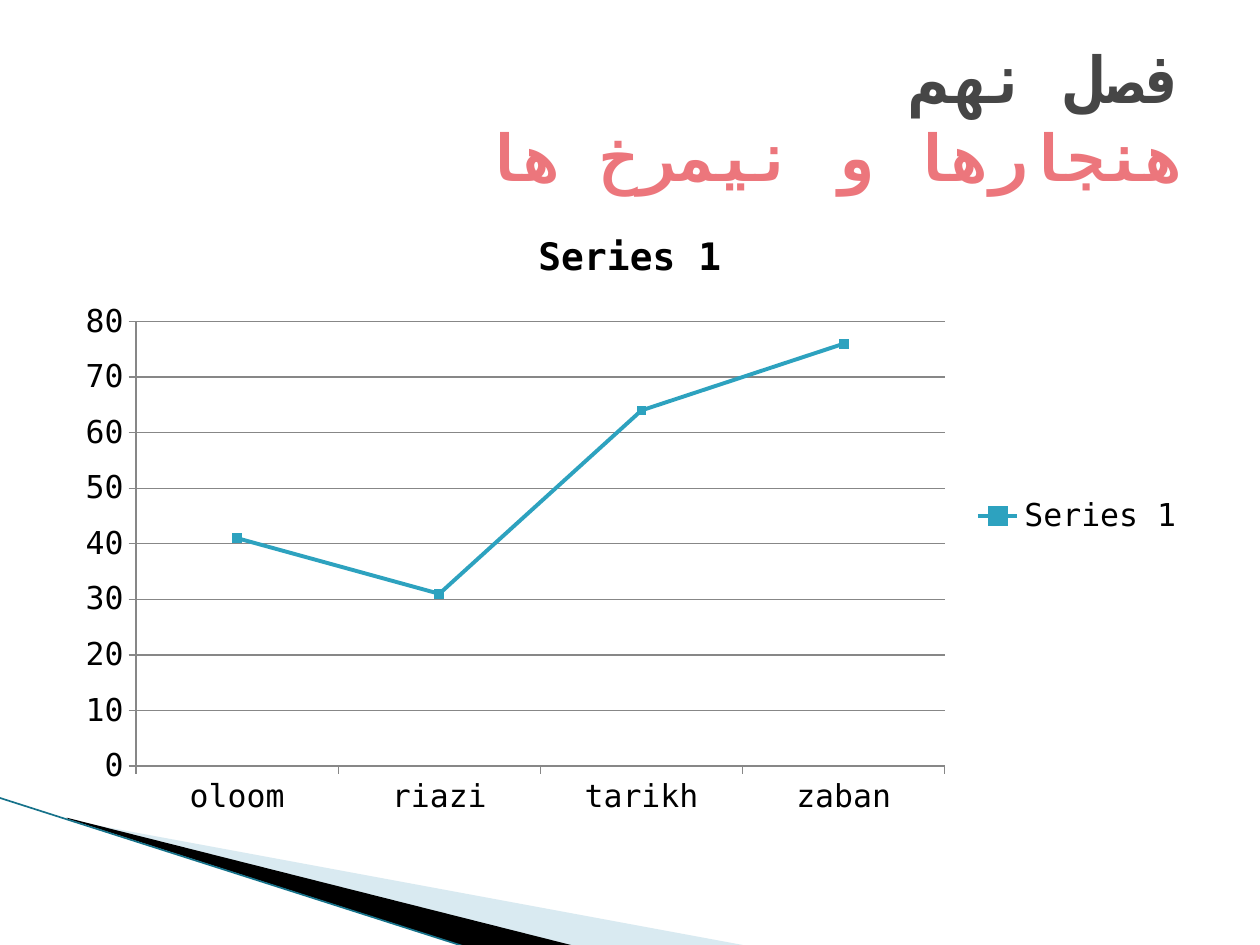
from typing import NamedTuple

from lxml.etree import SubElement as Sub
from pptx import Presentation
from pptx.chart.data import CategoryChartData as Data
from pptx.dml.color import RGBColor as Rgb
from pptx.enum.chart import XL_CHART_TYPE as Kind, XL_LEGEND_POSITION as Pos
from pptx.enum.chart import XL_MARKER_STYLE as Mark, XL_TICK_MARK as Tick
from pptx.enum.shapes import MSO_CONNECTOR as Wire
from pptx.enum.text import MSO_ANCHOR as Anchor, MSO_AUTO_SIZE as Fit, PP_ALIGN as Align
from pptx.oxml.ns import qn
from pptx.util import Inches, Pt

MONO = "DejaVu Sans Mono"


class Wedge(NamedTuple):
    points: list[tuple[float, float]]
    color: str
    alpha: int = 100


WEDGES = [
    Wedge([(0.55, 6.51), (5.95, 7.51), (4.56, 7.51), (0.55, 6.5)], "A0CBDC", 40),
    Wedge([(0.53, 6.49), (4.57, 7.51), (3.72, 7.52), (0.54, 6.5)], "000000"),
]


def paint(target, color: str) -> None:
    target.solid()
    target.fore_color.rgb = Rgb.from_string(color)


def style(font, size: float, color: str = "000000", name: str = MONO, bold: bool = False) -> None:
    font.size, font.name, font.bold = Pt(size), name, bold
    paint(font.fill, color)


def write(para, text: str, **form) -> None:
    run = para.add_run()
    run.text = text
    style(run.font, **form)


def draw_wedge(shapes, wedge: Wedge) -> None:
    first, *rest = [(Inches(x), Inches(y)) for x, y in wedge.points]
    pen = shapes.build_freeform(*first)
    pen.add_line_segments(rest, close=True)
    shape = pen.convert_to_shape()
    shape.shadow.inherit = False
    shape.line.fill.background()
    paint(shape.fill, wedge.color)
    if wedge.alpha < 100:
        tone = next(shape.element.spPr.iter(qn("a:srgbClr")))
        Sub(tone, qn("a:alpha"), val=str(wedge.alpha * 1000))


def draw_edge(shapes) -> None:
    ends = [Inches(n) for n in (-0.01, 6.33, 3.71, 7.52)]
    edge = shapes.add_connector(Wire.STRAIGHT, *ends)
    paint(edge.line.fill, "16728A")
    edge.line.width = Pt(0.95)
    Sub(edge.element.spPr, qn("a:effectLst"))


def draw_chart(shapes) -> None:
    data = Data()
    data.categories = ["oloom", "riazi", "tarikh", "zaban"]
    data.add_series("Series 1", [41, 31, 64, 76])
    box = [Inches(n) for n in (0.5, 1.62, 9, 4.95)]
    chart = shapes.add_chart(Kind.LINE_MARKERS, *box, data).chart
    style(chart.font, 18)
    chart.has_title = True
    write(chart.chart_title.text_frame.paragraphs[0], "Series 1", size=21.6, bold=True)
    chart.chart_title.include_in_layout = False
    chart.has_legend = True
    chart.legend.position = Pos.RIGHT
    chart.legend.include_in_layout = False
    value = chart.value_axis
    value.minimum_scale, value.maximum_scale, value.major_unit = 0, 80, 10
    value.has_major_gridlines = True
    for axis in (value, chart.category_axis):
        axis.major_tick_mark = Tick.OUTSIDE
        paint(axis.format.line.fill, "878787")
    paint(value.major_gridlines.format.line.fill, "878787")
    plot = chart.plots[0]
    plot.vary_by_categories = False
    line = plot.series[0]
    line.smooth = False
    line.format.line.width = Pt(2.25)
    line.marker.style, line.marker.size = Mark.SQUARE, 5
    for fill in (line.format.line.fill, line.marker.format.fill, line.marker.format.line.fill):
        paint(fill, "2DA2BF")


def fill_title(title) -> None:
    title.left, title.top, title.width, title.height = [Inches(n) for n in (0.5, 0.3, 9, 1.25)]
    frame = title.text_frame
    frame.word_wrap, frame.auto_size = True, Fit.NONE
    frame.vertical_anchor = Anchor.MIDDLE
    para = frame.paragraphs[0]
    para.alignment = Align.RIGHT
    para._p.get_or_add_pPr().set("rtl", "1")
    form = {"size": 36.9, "name": "Karla", "bold": True}
    write(para, "فصل نهم", color="464646", **form)
    para.add_line_break()
    write(para, "هنجارها و نیمرخ ها", color="EC767C", **form)
    for run in para.runs:
        Sub(run.font._element, qn("a:cs"), typeface=MONO)


def main() -> None:
    deck = Presentation()
    deck.slide_width, deck.slide_height = Inches(10), Inches(7.5)
    slide = deck.slides.add_slide(deck.slide_layouts[5])
    paint(slide.background.fill, "FFFFFF")
    for wedge in WEDGES:
        draw_wedge(slide.shapes, wedge)
    draw_edge(slide.shapes)
    draw_chart(slide.shapes)
    fill_title(slide.shapes.title)
    deck.save("out.pptx")


if __name__ == "__main__":
    main()
